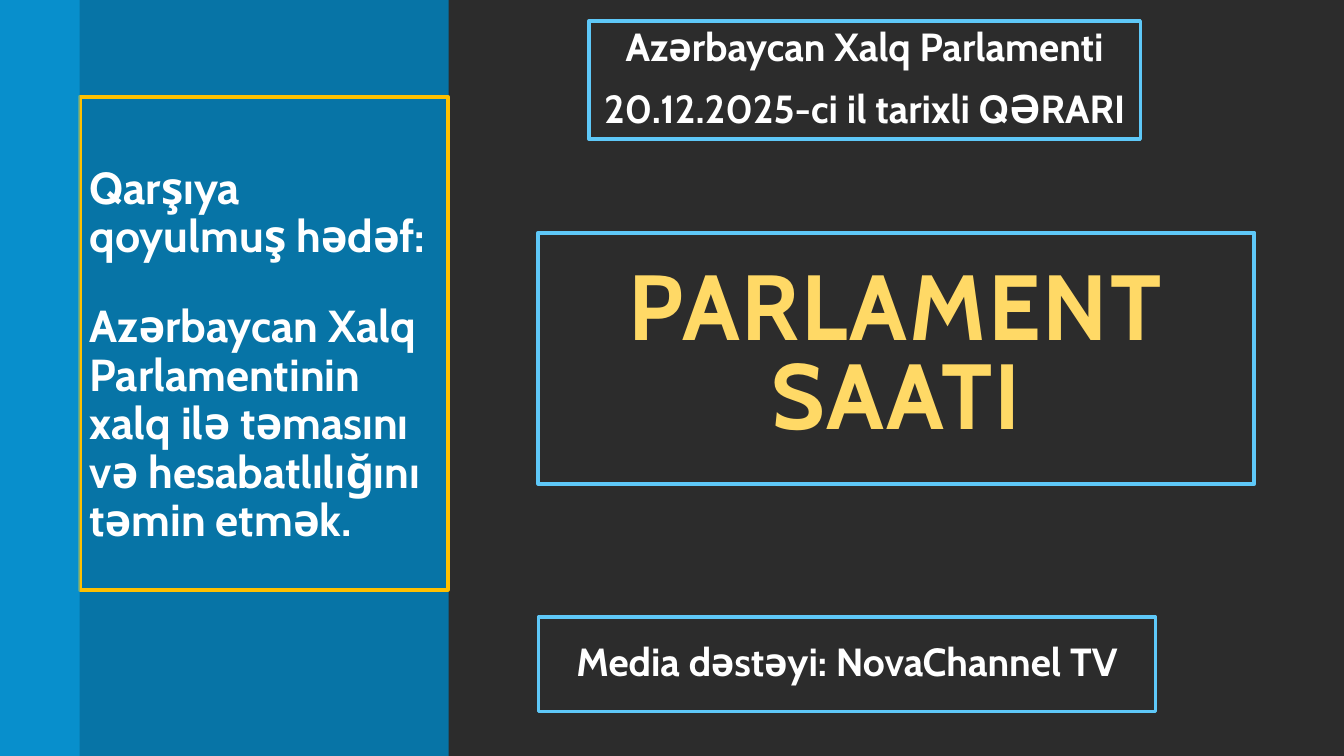
"""Builds the announcement slide for the parliament hour."""
from lxml.etree import SubElement
from pptx import Presentation
from pptx.dml.color import RGBColor
from pptx.enum.shapes import MSO_SHAPE as Shape
from pptx.enum.text import MSO_ANCHOR as Anchor, PP_ALIGN as Align
from pptx.oxml.ns import qn
from pptx.util import Inches, Pt

CHARCOAL = RGBColor(0x2C, 0x2C, 0x2C)
DEEP_BLUE = RGBColor(0x07, 0x74, 0xA6)
BRIGHT_BLUE = RGBColor(0x09, 0x9B, 0xDD)
SKY = RGBColor(0x5E, 0xC8, 0xF8)
AMBER = RGBColor(0xFF, 0xC0, 0x00)
GOLD = RGBColor(0xFF, 0xD9, 0x66)
WHITE = RGBColor(0xFF, 0xFF, 0xFF)

deck = Presentation()
deck.slide_width, deck.slide_height = Inches(13.33), Inches(7.5)
slide = deck.slides.add_slide(deck.slide_layouts[6])
slide.background.fill.solid()
slide.background.fill.fore_color.rgb = CHARCOAL


def add_band(width, color):
    band = slide.shapes.add_shape(Shape.RECTANGLE, 0, 0, Inches(width), deck.slide_height)
    band.shadow.inherit = False
    band.fill.solid()
    band.fill.fore_color.rgb = color
    band.line.fill.background()
    return band


def add_framed_text(place, frame_color, frame_width, lines, size, color=WHITE,
                    align=Align.CENTER, line_spacing=0.9, before=12, after=2):
    box = slide.shapes.add_textbox(*[Inches(length) for length in place])
    box.line.color.rgb = frame_color
    box.line.width = Pt(frame_width)
    frame = box.text_frame
    frame.word_wrap = True
    frame.vertical_anchor = Anchor.MIDDLE
    for index, line in enumerate(lines):
        para = frame.paragraphs[0] if index == 0 else frame.add_paragraph()
        para.alignment = align
        para.line_spacing = line_spacing
        para.space_before, para.space_after = Pt(before), Pt(after)
        span = para.add_run()
        span.text = line
        span.font.name = "Cabin"
        span.font.size = Pt(size)
        span.font.bold = True
        span.font.color.rgb = color
    return box


add_band(4.45, DEEP_BLUE)
goal = add_framed_text(
    (0.79, 0.96, 3.65, 4.89), AMBER, 3,
    ["Qarşıya qoyulmuş hədəf:",
     "Azərbaycan Xalq Parlamentinin xalq ilə təmasını və hesabatlılığını təmin etmək."],
    32, align=Align.LEFT, before=0, after=0)
goal.text_frame.margin_top = Inches(0.3)
goal.text_frame.paragraphs[1].space_before = Pt(30)

edge = add_band(0.79, BRIGHT_BLUE)
edge_color = edge.fill._xPr.find(qn("a:solidFill"))[0]
SubElement(edge_color, qn("a:alpha")).set("val", "70000")

title = add_framed_text((5.34, 2.31, 7.1, 2.49), SKY, 3, ["PARLAMENT SAATI"], 66,
                        color=GOLD, line_spacing=0.8, before=0, after=0)
title.text_frame.paragraphs[0].runs[0].font._element.set("spc", "150")

add_framed_text((5.84, 0.21, 5.47, 1.17), SKY, 2.5,
                ["Azərbaycan Xalq Parlamenti", "20.12.2025-ci il tarixli QƏRARI"], 28)
add_framed_text((5.34, 6.12, 6.12, 0.94), SKY, 2.5, ["Media dəstəyi: NovaChannel TV"], 28)

deck.save("out.pptx")
